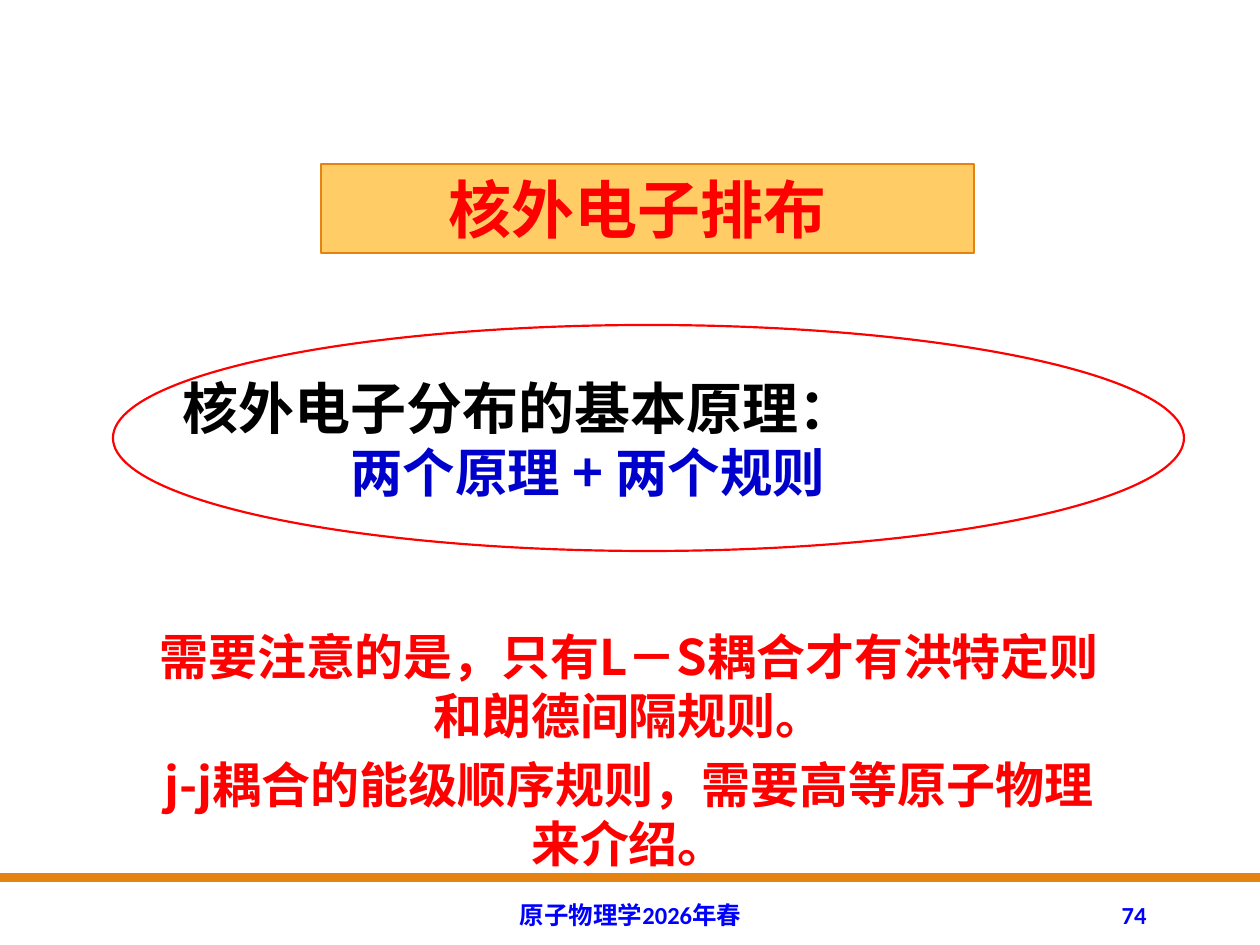
from dataclasses import dataclass
from typing import Optional

import pptx
import pptx.dml.color
import pptx.enum.shapes
import pptx.enum.text
import pptx.oxml.ns
import pptx.util

SCALE = 914400 / 126
ALIGN = pptx.enum.text.PP_ALIGN
ANCHOR = pptx.enum.text.MSO_ANCHOR
SHAPE = pptx.enum.shapes.MSO_SHAPE


@dataclass(frozen=True)
class Theme:
    orange: str = "E48312"
    sand: str = "FFCC66"
    red: str = "FF0000"
    black: str = "000000"
    navy: str = "0000CC"
    blue: str = "0000FF"
    cjk: str = "Noto Sans CJK SC"
    latin: str = "Calibri"
    title: int = 36
    heading: int = 32
    rules: int = 30
    note: int = 28
    footer: int = 14


THEME = Theme()


@dataclass(frozen=True)
class Box:
    left: int
    top: int
    width: int
    height: int


@dataclass(frozen=True)
class Para:
    text: str
    size: int
    color: str
    align: ALIGN = ALIGN.LEFT
    font: str = THEME.cjk
    indent: int = 0
    line_pt: Optional[float] = None
    before_pt: Optional[float] = None


@dataclass(frozen=True)
class Label:
    box: Box
    paras: tuple[Para, ...]
    anchor: ANCHOR = ANCHOR.TOP


def px(n: int) -> pptx.util.Emu:
    return pptx.util.Emu(round(n * SCALE))


def place(box: Box) -> tuple:
    return px(box.left), px(box.top), px(box.width), px(box.height)


def rgb(value: str) -> pptx.dml.color.RGBColor:
    return pptx.dml.color.RGBColor.from_string(value)


def add_para(p, para: Para) -> None:
    if para.indent:
        p._p.get_or_add_pPr().set("marL", str(px(para.indent)))
    formats = {"alignment": para.align}
    if para.line_pt:
        formats["line_spacing"] = pptx.util.Pt(para.line_pt)
    if para.before_pt:
        formats["space_before"] = pptx.util.Pt(para.before_pt)
    for name, value in formats.items():
        setattr(p, name, value)
    r = p.add_run()
    r.text = para.text
    fonts = {"name": para.font, "size": pptx.util.Pt(para.size), "bold": True}
    for name, value in fonts.items():
        setattr(r.font, name, value)
    r.font.color.rgb = rgb(para.color)
    # East Asian glyphs take their typeface from a:ea, right after a:latin.
    ea = pptx.oxml.parse_xml(
        f'<a:ea {pptx.oxml.ns.nsdecls("a")} typeface="{THEME.cjk}"/>')
    r._r.rPr.find(pptx.oxml.ns.qn("a:latin")).addnext(ea)


def write(tf, paras: tuple[Para, ...], anchor: ANCHOR) -> None:
    for name, value in {"word_wrap": True, "vertical_anchor": anchor}.items():
        setattr(tf, name, value)
    for i, para in enumerate(paras):
        add_para(tf.add_paragraph() if i else tf.paragraphs[0], para)


def add_label(s, label: Label) -> None:
    sp = s.shapes.add_textbox(*place(label.box))
    write(sp.text_frame, label.paras, label.anchor)


def add_figure(s, kind: SHAPE, box: Box, fill: Optional[str] = None,
               line: Optional[str] = None, weight: float = 0.75):
    sp = s.shapes.add_shape(kind, *place(box))
    sp.shadow.inherit = False
    for part, color in ((sp.fill, fill), (sp.line.fill, line)):
        if color:
            part.solid()
            part.fore_color.rgb = rgb(color)
        else:
            part.background()
    if line:
        sp.line.width = pptx.util.Pt(weight)
    return sp


def footer(text: str, box: Box, align: ALIGN) -> Label:
    para = Para(text, THEME.footer, THEME.blue, align, THEME.latin)
    return Label(box, (para,), ANCHOR.MIDDLE)


def note(text: str, before_pt: Optional[float] = None) -> Para:
    return Para(text, THEME.note, THEME.red, ALIGN.CENTER,
                line_pt=33.8, before_pt=before_pt)


TITLE = Para("核外电子排布", THEME.title, THEME.red, indent=115)
LABELS = (
    Label(Box(134, 367, 1108, 144), (
        Para("核外电子分布的基本原理：", THEME.heading, THEME.black,
             ALIGN.JUSTIFY, indent=36),
        Para("两个原理 + 两个规则", THEME.rules, THEME.navy,
             ALIGN.JUSTIFY, indent=204),
    )),
    Label(Box(134, 620, 990, 265), (
        note("需要注意的是，只有L－S耦合才有洪特定则和朗德间隔规则。"),
        note("j-j耦合的能级顺序规则，需要高等原子物理来介绍。", 5.6),
    )),
    footer("原子物理学2026年春", Box(381, 890, 499, 50), ALIGN.CENTER),
    footer("74", Box(1023, 890, 136, 50), ALIGN.RIGHT),
)


def main() -> None:
    prs = pptx.Presentation()
    prs.slide_width, prs.slide_height = px(1260), px(945)
    s = prs.slides.add_slide(prs.slide_layouts[6])
    add_figure(s, SHAPE.RECTANGLE, Box(0, 873, 1260, 9), fill=THEME.orange)
    banner = add_figure(s, SHAPE.RECTANGLE, Box(321, 164, 653, 89),
                        fill=THEME.sand, line=THEME.orange)
    write(banner.text_frame, (TITLE,), ANCHOR.TOP)
    add_figure(s, SHAPE.OVAL, Box(113, 325, 1071, 226),
               line=THEME.red, weight=1.25)
    for label in LABELS:
        add_label(s, label)
    prs.save("out.pptx")


if __name__ == "__main__":
    main()
